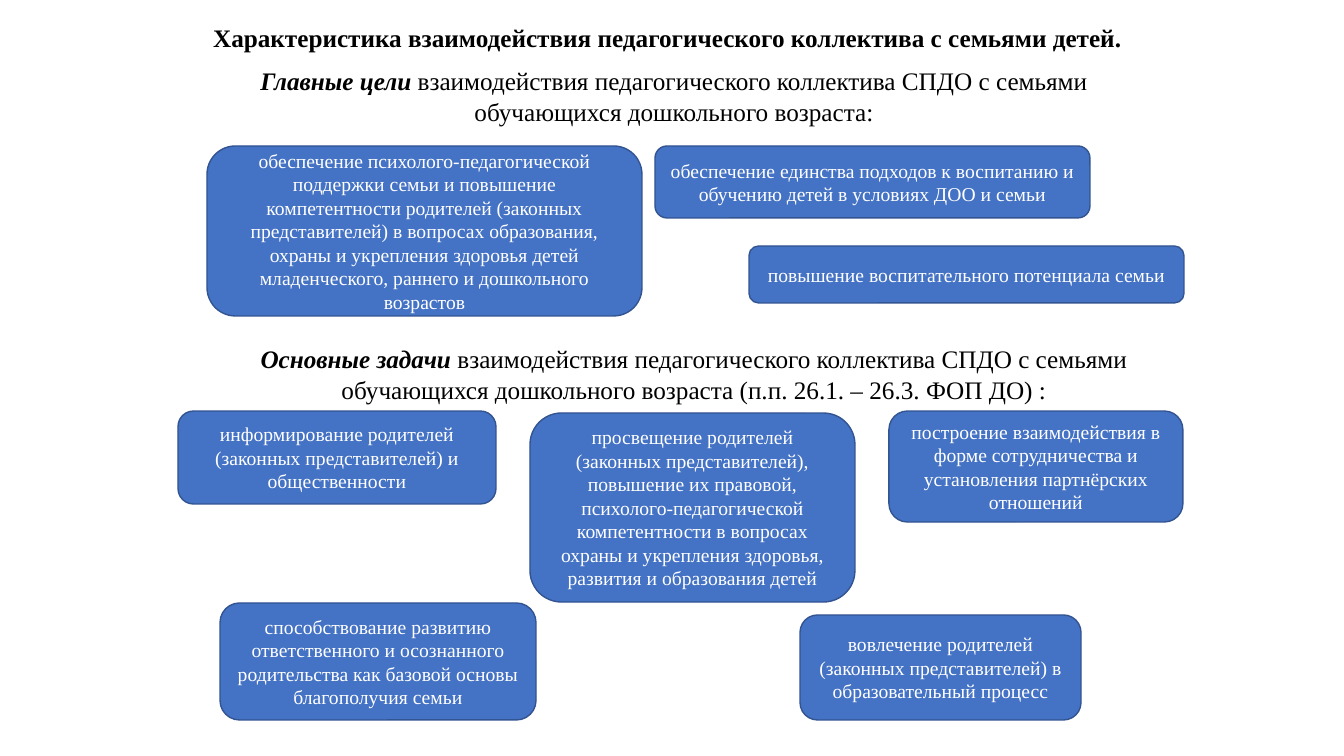
"""Build a slide on the goals and tasks of working with children's families."""
from pptx import Presentation
from pptx.dml.color import RGBColor
from pptx.enum.shapes import MSO_SHAPE
from pptx.enum.text import MSO_ANCHOR, PP_ALIGN
from pptx.util import Emu, Pt

BLUE = RGBColor(0x44, 0x72, 0xC4)
DARK_BLUE = RGBColor(0x32, 0x54, 0x91)
WHITE = RGBColor(0xFF, 0xFF, 0xFF)
BLACK = RGBColor(0x00, 0x00, 0x00)
FONT = "Times New Roman"
EMU_PER_PX = 914400 / 100.8


def px(*lengths):
    return [Emu(round(length * EMU_PER_PX)) for length in lengths]


def format_text(shape, size, color, anchor):
    shape.text_frame.word_wrap = True
    shape.text_frame.vertical_anchor = anchor
    paragraph = shape.text_frame.paragraphs[0]
    paragraph.alignment = PP_ALIGN.CENTER
    paragraph.font.name = FONT
    paragraph.font.size = Pt(size)
    paragraph.font.color.rgb = color
    return paragraph


presentation = Presentation()
presentation.slide_width, presentation.slide_height = px(1344, 756)
slide = presentation.slides.add_slide(presentation.slide_layouts[6])

title = slide.shapes.add_textbox(*px(187, 28, 961, 31))
paragraph = format_text(title, 18, BLACK, MSO_ANCHOR.TOP)
paragraph.text = "Характеристика взаимодействия педагогического коллектива с семьями детей."
paragraph.font.bold = True
paragraph.line_spacing = Pt(13.8)

headings = [
    (187, 60, "Главные цели",
     " взаимодействия педагогического коллектива СПДО с семьями "
     "обучающихся дошкольного возраста:"),
    (207, 338, "Основные задачи ",
     "взаимодействия педагогического коллектива СПДО с семьями "
     "обучающихся дошкольного возраста (п.п. 26.1. – 26.3. ФОП ДО) :"),
]
for left, top, lead, rest in headings:
    heading = slide.shapes.add_textbox(*px(left, top, 974, 72))
    paragraph = format_text(heading, 18, BLACK, MSO_ANCHOR.MIDDLE)
    lead_run = paragraph.add_run()
    lead_run.text = lead
    lead_run.font.bold = True
    lead_run.font.italic = True
    paragraph.add_run().text = rest

goals = [
    (207, 146, 435, 170,
     "обеспечение психолого-педагогической поддержки семьи и повышение "
     "компетентности родителей (законных представителей) в вопросах образования, "
     "охраны и укрепления здоровья детей младенческого, раннего и дошкольного возрастов"),
    (655, 146, 435, 72,
     "обеспечение единства подходов к воспитанию и обучению детей в условиях ДОО и семьи"),
    (749, 246, 435, 57, "повышение воспитательного потенциала семьи"),
]
tasks = [
    (178, 411, 318, 93,
     "информирование родителей (законных представителей) и общественности"),
    (530, 413, 325, 189,
     "просвещение родителей (законных представителей), повышение их правовой, "
     "психолого-педагогической компетентности в вопросах охраны и укрепления "
     "здоровья, развития и образования детей"),
    (889, 411, 294, 111,
     "построение взаимодействия в форме сотрудничества и установления "
     "партнёрских отношений"),
    (220, 603, 316, 117,
     "способствование развитию ответственного и осознанного родительства "
     "как базовой основы благополучия семьи"),
    (800, 615, 281, 105,
     "вовлечение родителей (законных представителей) в образовательный процесс"),
]
for left, top, width, height, text in goals + tasks:
    card = slide.shapes.add_shape(
        MSO_SHAPE.FLOWCHART_ALTERNATE_PROCESS, *px(left, top, width, height))
    card.shadow.inherit = False
    card.fill.solid()
    card.fill.fore_color.rgb = BLUE
    card.line.color.rgb = DARK_BLUE
    card.line.width = Pt(1)
    format_text(card, 14, WHITE, MSO_ANCHOR.MIDDLE).text = text

presentation.save("out.pptx")
